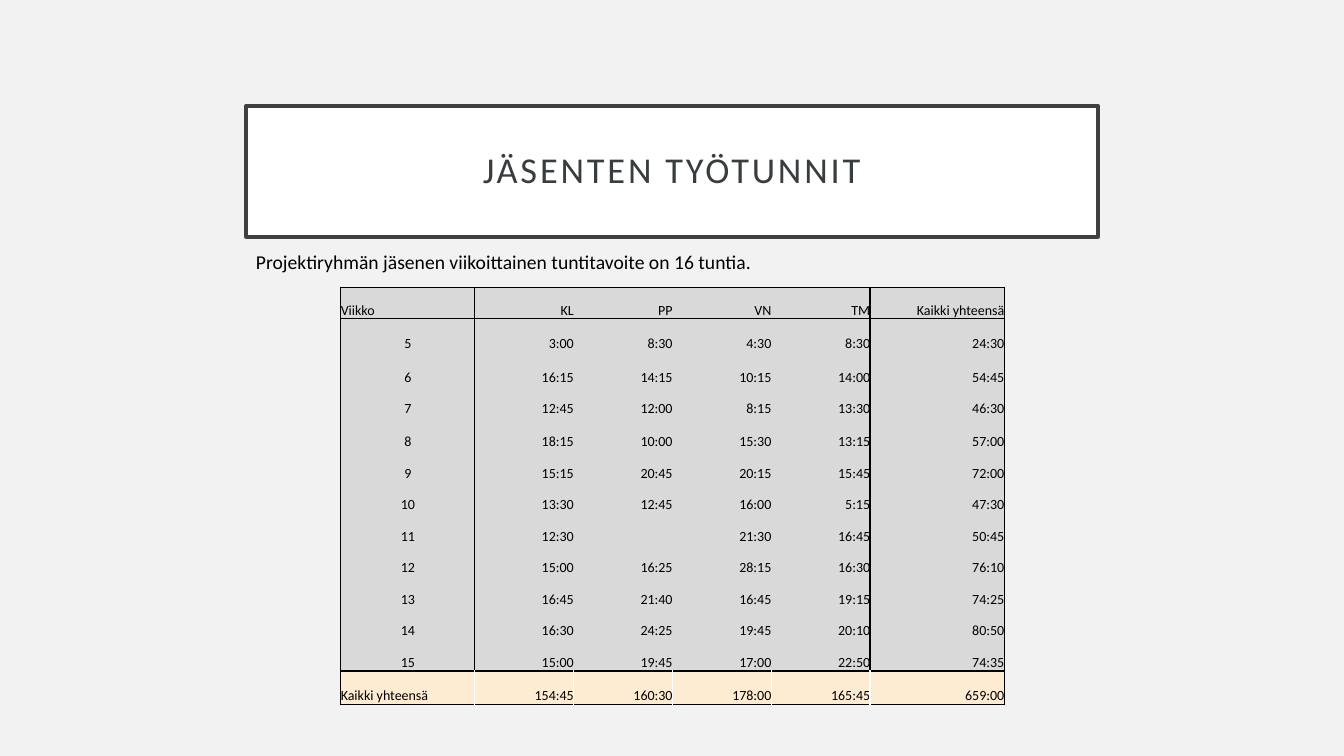
from lxml.etree import SubElement
from pptx import Presentation
from pptx.dml.color import RGBColor
from pptx.enum.text import MSO_ANCHOR, MSO_AUTO_SIZE, PP_ALIGN
from pptx.oxml.ns import qn
from pptx.util import Inches, Pt

HOURS = [
    ["Viikko", "KL", "PP", "VN", "TM", "Kaikki yhteensä"],
    ["5", "3:00", "8:30", "4:30", "8:30", "24:30"],
    ["6", "16:15", "14:15", "10:15", "14:00", "54:45"],
    ["7", "12:45", "12:00", "8:15", "13:30", "46:30"],
    ["8", "18:15", "10:00", "15:30", "13:15", "57:00"],
    ["9", "15:15", "20:45", "20:15", "15:45", "72:00"],
    ["10", "13:30", "12:45", "16:00", "5:15", "47:30"],
    ["11", "12:30", "", "21:30", "16:45", "50:45"],
    ["12", "15:00", "16:25", "28:15", "16:30", "76:10"],
    ["13", "16:45", "21:40", "16:45", "19:15", "74:25"],
    ["14", "16:30", "24:25", "19:45", "20:10", "80:50"],
    ["15", "15:00", "19:45", "17:00", "22:50", "74:35"],
    ["Kaikki yhteensä", "154:45", "160:30", "178:00", "165:45", "659:00"],
]
COLUMN_WIDTHS = [1.33, 0.98, 0.98, 0.98, 0.98, 1.33]
TALL_ROWS = (1, 2, 4, 12)


def rgb(value):
    """Turn a hex string into a colour."""
    return RGBColor.from_string(value)


class HoursSlide:
    """Hold the style and the current slide."""

    font = "Calibri"
    ink, black, white = "383E40", "000000", "FFFFFF"
    frame, body, total = "404040", "D9D9D9", "FDECD2"

    def __init__(self, prs):
        """Add a title-only slide with a plain background."""
        self.s = prs.slides.add_slide(prs.slide_layouts[5])
        fill = self.s.background.fill
        fill.solid()
        fill.fore_color.rgb = rgb("F2F2F2")

    def paragraph(self, p, text, size, color, align=PP_ALIGN.LEFT):
        """Fill and format one paragraph."""
        p.text = text
        p.alignment = align
        p.font.name = self.font
        p.font.size = Pt(size)
        p.font.color.rgb = rgb(color)

    def title(self, text, left, top, width, height):
        """Place the framed title."""
        sp = self.s.shapes.title
        sp.left, sp.top = Inches(left), Inches(top)
        sp.width, sp.height = Inches(width), Inches(height)
        sp.fill.solid()
        sp.fill.fore_color.rgb = rgb(self.white)
        sp.line.color.rgb = rgb(self.frame)
        sp.line.width = Pt(2.5)
        tf = sp.text_frame
        tf.auto_size = MSO_AUTO_SIZE.NONE
        tf.vertical_anchor = MSO_ANCHOR.MIDDLE
        tf.margin_left = tf.margin_right = Inches(0.2)
        tf.margin_top = tf.margin_bottom = Inches(0.2)
        p = tf.paragraphs[0]
        self.paragraph(p, text, 26, self.ink, PP_ALIGN.CENTER)
        p.line_spacing = 0.9
        p.runs[0]._r.get_or_add_rPr().set("spc", "200")

    def text(self, text, left, top, width, height):
        """Add a text box."""
        sp = self.s.shapes.add_textbox(
            Inches(left), Inches(top), Inches(width), Inches(height))
        tf = sp.text_frame
        tf.word_wrap = True
        tf.auto_size = MSO_AUTO_SIZE.SHAPE_TO_FIT_TEXT
        self.paragraph(tf.paragraphs[0], text, 14, self.black)

    def border(self, cell, side, color):
        """Draw one cell edge, or clear it when there is no colour."""
        ln = SubElement(cell._tc.get_or_add_tcPr(), qn(f"a:ln{side}"), w=str(Pt(1)))
        if color:
            fill = SubElement(ln, qn("a:solidFill"))
            SubElement(fill, qn("a:srgbClr"), val=color)
        else:
            SubElement(ln, qn("a:noFill"))

    def cell(self, cell, text, align, fill, edges):
        """Format one table cell."""
        for side, color in edges.items():
            self.border(cell, side, color)
        cell.fill.solid()
        cell.fill.fore_color.rgb = rgb(fill)
        cell.vertical_anchor = MSO_ANCHOR.BOTTOM
        cell.margin_left = cell.margin_right = 0
        cell.margin_top = cell.margin_bottom = 0
        self.paragraph(cell.text_frame.paragraphs[0], text, 10, self.black, align)

    def table(self, rows, widths, left, top, height):
        """Add the table of hours with its ruled groups."""
        last, end = len(rows) - 1, len(widths)
        table = self.s.shapes.add_table(
            len(rows), end, Inches(left), Inches(top),
            Inches(sum(widths)), Inches(height)).table
        table.first_row = table.horz_banding = False
        for column, width in zip(table.columns, widths):
            column.width = Inches(width)
        heights = [0.33 if i in TALL_ROWS else 0.31 for i in range(len(rows))]
        for row, h in zip(table.rows, heights):
            row.height = Inches(h * height / sum(heights))

        def upright(i, j):
            """Give the colour of a vertical edge."""
            if j in (0, end):
                return self.black
            if i == last:
                return self.white
            return self.black if j in (1, end - 1) else None

        def level(i):
            """Give the colour of a horizontal edge."""
            return self.black if i in (0, 1, last, last + 1) else None

        for i, row in enumerate(rows):
            for j, text in enumerate(row):
                align = PP_ALIGN.RIGHT
                if j == 0:
                    align = PP_ALIGN.LEFT if i in (0, last) else PP_ALIGN.CENTER
                edges = {"L": upright(i, j), "R": upright(i, j + 1),
                         "T": level(i), "B": level(i + 1)}
                fill = self.total if i == last else self.body
                self.cell(table.cell(i, j), text, align, fill, edges)


def main():
    """Build and save the slide."""
    prs = Presentation()
    prs.slide_width, prs.slide_height = Inches(13.33), Inches(7.5)
    slide = HoursSlide(prs)
    slide.title("JÄSENTEN TYÖTUNNIT", 2.44, 1.05, 8.45, 1.3)
    slide.text("Projektiryhmän jäsenen viikoittainen tuntitavoite on 16 tuntia.",
               2.44, 2.43, 7.59, 0.34)
    slide.table(HOURS, COLUMN_WIDTHS, 3.38, 2.85, 4.14)
    prs.save("out.pptx")


if __name__ == "__main__":
    main()
